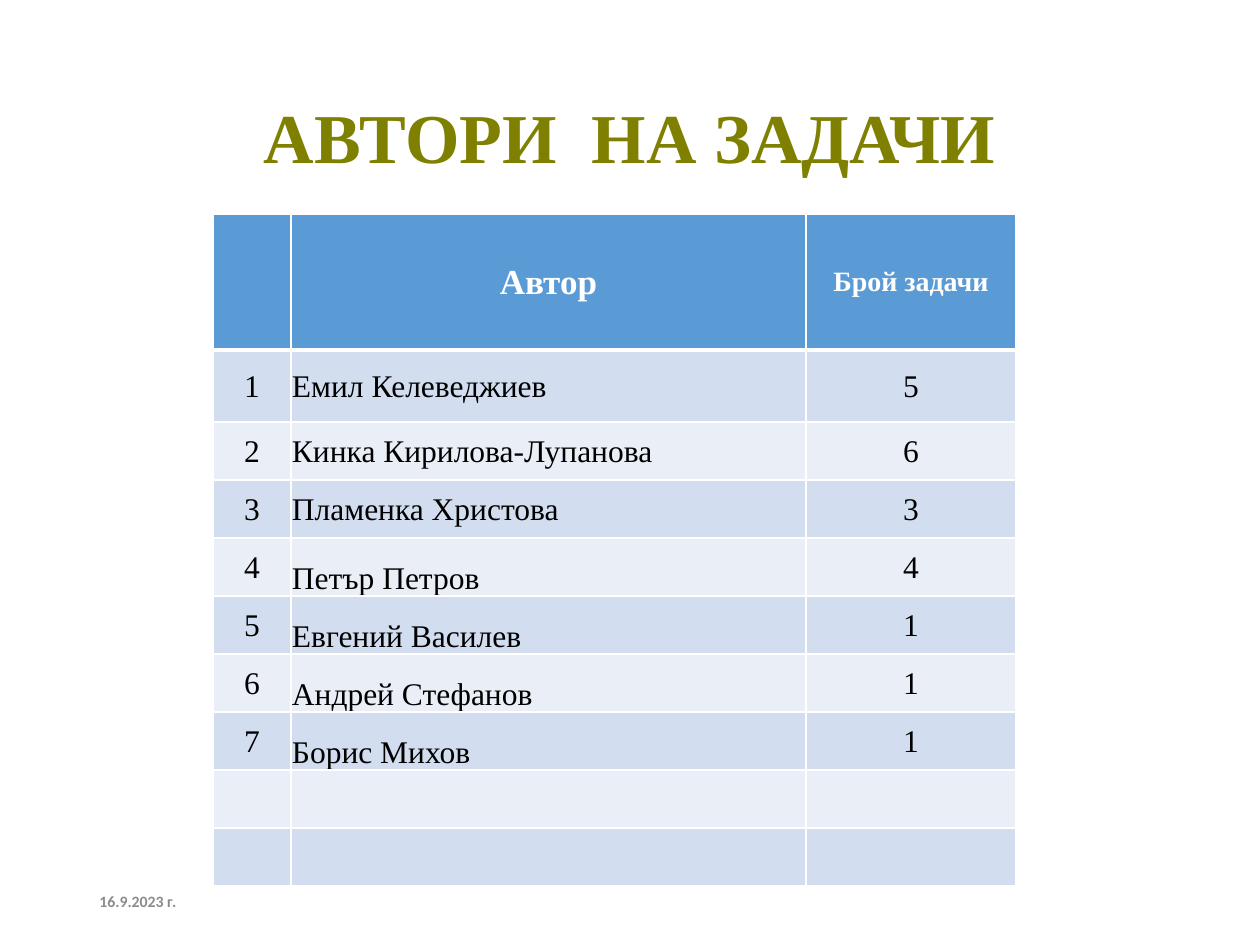
from lxml.etree import SubElement
from pptx import Presentation
from pptx.dml.color import RGBColor
from pptx.enum.text import MSO_ANCHOR, PP_ALIGN
from pptx.oxml.ns import qn
from pptx.util import Emu, Pt

SERIF = "Times New Roman"
BLUE, BAND_DARK, BAND_LIGHT = "5B9BD5", "D2DEEF", "EAEFF7"

AUTHORS = [
    ("Емил Келеведжиев", 5),
    ("Кинка Кирилова-Лупанова", 6),
    ("Пламенка Христова", 3),
    ("Петър Петров", 4),
    ("Евгений Василев", 1),
    ("Андрей Стефанов", 1),
    ("Борис Михов", 1),
]
CENTRED_NAMES = 3  # names further down sit at the bottom of their cells
SPARE_ROWS = 2


def px(length):
    return Emu(round(length * 914400 / 126))


def colour(hex_code):
    return RGBColor.from_string(hex_code)


def write(frame, text, size=18, font=SERIF, ink="000000", bold=False,
          align=PP_ALIGN.LEFT, spacing=None):
    paragraph = frame.paragraphs[0]
    paragraph.alignment = align
    if spacing:
        paragraph.line_spacing = spacing
    run = paragraph.add_run()
    run.text = text
    run.font.size = Pt(size)
    run.font.name = font
    run.font.bold = bold
    run.font.color.rgb = colour(ink)


class AuthorSlide:
    def __init__(self, deck):
        self.slide = deck.slides.add_slide(deck.slide_layouts[5])

    def title(self, box, text):
        heading = self.slide.shapes.title
        heading.left, heading.top, heading.width, heading.height = map(px, box)
        heading.text_frame.vertical_anchor = MSO_ANCHOR.MIDDLE
        write(heading.text_frame, text, size=40, ink="808000", bold=True,
              align=PP_ALIGN.CENTER, spacing=0.9)

    def label(self, box, text, **style):
        label = self.slide.shapes.add_textbox(*map(px, box))
        label.text_frame.word_wrap = True
        label.text_frame.vertical_anchor = MSO_ANCHOR.MIDDLE
        write(label.text_frame, text, **style)

    def table(self, left, top, widths, heights):
        size = px(sum(widths)), px(sum(heights))
        table = self.slide.shapes.add_table(
            len(heights), len(widths), px(left), px(top), *size).table
        for column, width in zip(table.columns, widths):
            column.width = px(width)
        for row, height in zip(table.rows, heights):
            row.height = px(height)
        return table

    def cell(self, cell, fill, text="", anchor=MSO_ANCHOR.MIDDLE,
             top_line=1, bottom_line=1, **style):
        # Borders come before the fill in the cell properties
        properties = cell._tc.get_or_add_tcPr()
        for side, width in (("L", 1), ("R", 1), ("T", top_line), ("B", bottom_line)):
            line = SubElement(properties, qn(f"a:ln{side}"), w=str(Pt(width)))
            solid = SubElement(line, qn("a:solidFill"))
            SubElement(solid, qn("a:srgbClr"), val="FFFFFF")
        cell.fill.solid()
        cell.fill.fore_color.rgb = colour(fill)
        if text:
            cell.margin_left = cell.margin_right = cell.margin_top = px(1)
            cell.margin_bottom = 0
            cell.vertical_anchor = anchor
            write(cell.text_frame, text, **style)


def main():
    deck = Presentation()
    deck.slide_width, deck.slide_height = px(1260), px(945)
    page = AuthorSlide(deck)

    page.title((94, 67, 1071, 147), "АВТОРИ  НА ЗАДАЧИ")

    # Table of authors and their number of tasks
    row_count = len(AUTHORS) + SPARE_ROWS
    authors = page.table(213, 214, [78, 515, 210],
                         [136, 72] + [58] * (row_count - 1))

    # Header row
    for column, (heading, size) in enumerate([("", 20), ("Автор", 20), ("Брой задачи", 16)]):
        page.cell(authors.cell(0, column), BLUE, heading, bottom_line=3, size=size,
                  ink="FFFFFF", bold=True, align=PP_ALIGN.CENTER)

    # Banded rows, the last ones left blank
    entries = [(str(number), name, str(tasks))
               for number, (name, tasks) in enumerate(AUTHORS, 1)]
    entries += [("", "", "")] * SPARE_ROWS
    for row, entry in enumerate(entries, 1):
        band = BAND_DARK if row % 2 else BAND_LIGHT
        for column, text in enumerate(entry):
            is_name = column == 1
            low = is_name and row > CENTRED_NAMES
            page.cell(authors.cell(row, column), band, text,
                      anchor=MSO_ANCHOR.BOTTOM if low else MSO_ANCHOR.MIDDLE,
                      top_line=3 if row == 1 else 1,
                      align=PP_ALIGN.LEFT if is_name else PP_ALIGN.CENTER)

    # Date
    page.label((87, 876, 284, 50), "16.9.2023 г.", size=9, font="Calibri",
               ink="8C8C8C", bold=True)

    deck.save("out.pptx")


if __name__ == "__main__":
    main()
